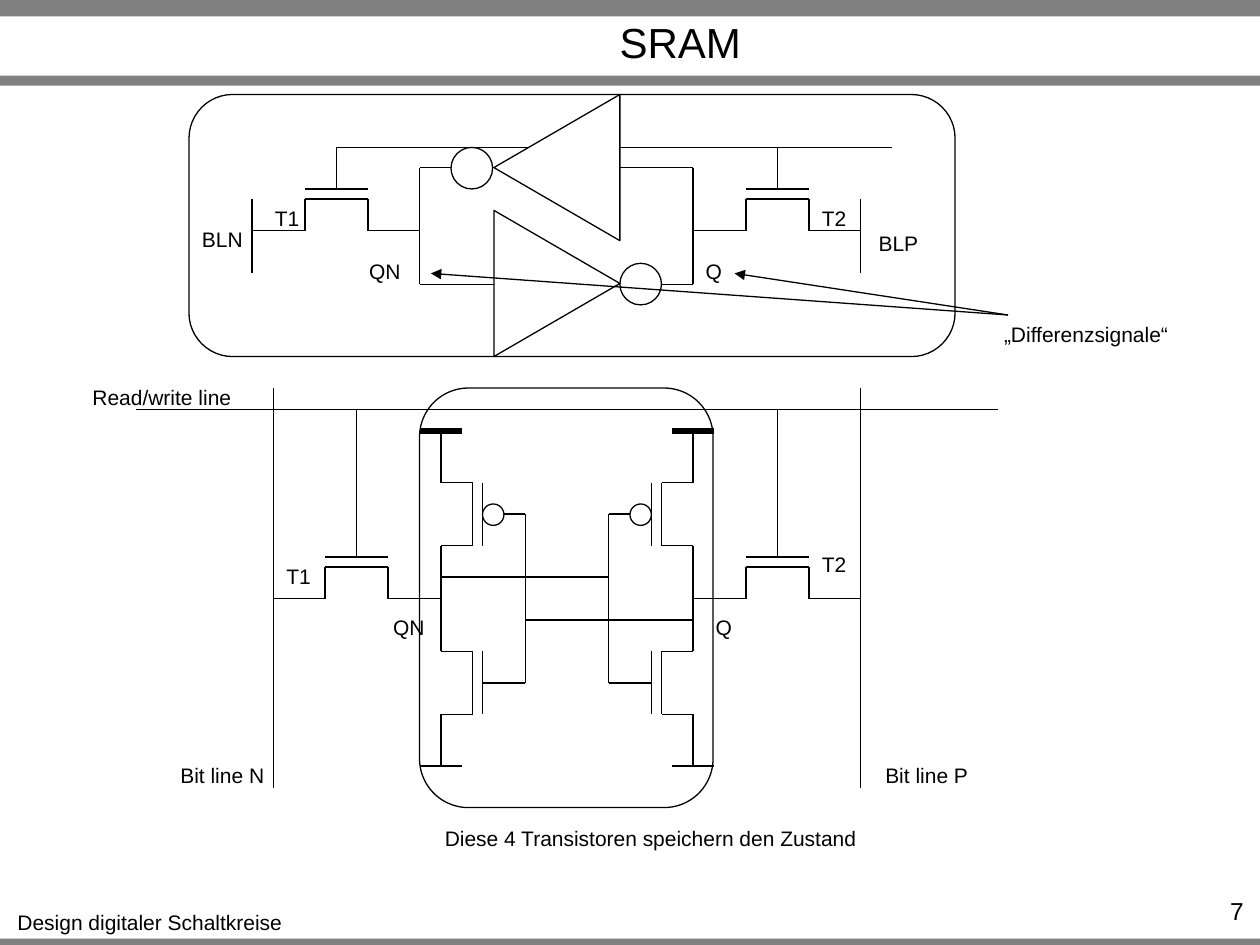
from dataclasses import dataclass

from lxml import etree
from pptx import Presentation
from pptx.dml.color import RGBColor
from pptx.enum.shapes import MSO_CONNECTOR, MSO_SHAPE
from pptx.enum.text import MSO_ANCHOR, MSO_AUTO_SIZE, PP_ALIGN
from pptx.oxml.ns import qn
from pptx.util import Inches, Pt

STRAIGHT = MSO_CONNECTOR.STRAIGHT
RECTANGLE = MSO_SHAPE.RECTANGLE
ROUNDED = MSO_SHAPE.ROUNDED_RECTANGLE
OVAL = MSO_SHAPE.OVAL
TRIANGLE = MSO_SHAPE.ISOSCELES_TRIANGLE
CENTER, RIGHT = PP_ALIGN.CENTER, PP_ALIGN.RIGHT
TOP, MIDDLE = MSO_ANCHOR.TOP, MSO_ANCHOR.MIDDLE
FIT_SHAPE = MSO_AUTO_SIZE.SHAPE_TO_FIT_TEXT


@dataclass(frozen=True)
class Theme:
    ink: RGBColor = RGBColor(0, 0, 0)
    paper: RGBColor = RGBColor(255, 255, 255)
    band: RGBColor = RGBColor(128, 128, 128)
    font: str = "Arial"
    label: int = 12
    number: int = 14
    title: int = 24
    thin: float = 0.75
    thick: float = 3


class Schematic:
    def __init__(self, slide, theme):
        self.slide = slide
        self.theme = theme

    def wire(self, x1, y1, x2, y2, width=None, arrow=False):
        wire = self.slide.shapes.add_connector(
            STRAIGHT, Inches(x1), Inches(y1), Inches(x2), Inches(y2))
        wire.line.color.rgb = self.theme.ink
        wire.line.width = Pt(width or self.theme.thin)
        properties = wire._element.spPr
        if arrow:
            etree.SubElement(properties.find(qn("a:ln")), qn("a:tailEnd"), type="triangle")
        etree.SubElement(properties, qn("a:effectLst"))

    def outline(self, kind, x, y, width, height, fill=None, rotation=0):
        outline = self.slide.shapes.add_shape(
            kind, Inches(x), Inches(y), Inches(width), Inches(height))
        outline.shadow.inherit = False
        outline.rotation = rotation
        outline.line.color.rgb = self.theme.ink
        outline.line.width = Pt(self.theme.thin)
        if fill is None:
            outline.fill.background()
        else:
            outline.fill.solid()
            outline.fill.fore_color.rgb = fill
        return outline

    def band(self, y, height):
        band = self.outline(RECTANGLE, 0, y, 10, height, self.theme.band)
        band.line.fill.background()

    def text(self, words, x, y, width, height, size, align=CENTER, anchor=TOP, wrap=True):
        box = self.slide.shapes.add_textbox(
            Inches(x), Inches(y), Inches(width), Inches(height))
        frame = box.text_frame
        frame.word_wrap = wrap
        frame.vertical_anchor = anchor
        if not wrap:
            frame.auto_size = FIT_SHAPE
        paragraph = frame.paragraphs[0]
        paragraph.alignment = align
        run = paragraph.add_run()
        run.text = words
        run.font.name = self.theme.font
        run.font.size = Pt(size)
        run.font.color.rgb = self.theme.ink

    def label(self, words, x, y, width):
        self.text(words, x, y, width, 0.3, self.theme.label, wrap=False)

    def access_transistor(self, x, gate_y, word_y, left_end, right_end):
        left, right = x - 0.25, x + 0.25
        channel_y, wire_y = gate_y + 0.08, gate_y + 0.33
        self.wire(left, channel_y, right, channel_y)
        self.wire(left, channel_y, left, wire_y)
        self.wire(right, channel_y, right, wire_y)
        self.wire(left, gate_y, right, gate_y)
        self.wire(left_end, wire_y, left, wire_y)
        self.wire(right, wire_y, right_end, wire_y)
        self.wire(x, gate_y, x, word_y)

    def cell_half(self, axis, side):
        def mirrored(d1, y1, d2, y2, width=None):
            self.wire(axis + side * d1, y1, axis + side * d2, y2, width)

        for top, gate_end in ((3.83, 0.5), (5.17, 0.67)):
            bottom, middle = top + 0.5, top + 0.25
            mirrored(0.75, top, 0.75, bottom)
            mirrored(0.75, top, 1, top)
            mirrored(0.75, bottom, 1, bottom)
            mirrored(0.67, top, 0.67, bottom)
            mirrored(gate_end, middle, 0.33, middle)
        for start, end in ((3.42, 3.83), (4.33, 4.75), (4.75, 5.17), (5.67, 6.08)):
            mirrored(1, start, 1, end)
        mirrored(0.33, 4.08, 0.33, 5.42)
        mirrored(0.83, 3.42, 1.17, 3.42, self.theme.thick)
        mirrored(0.83, 6.08, 1.17, 6.08)
        self.outline(OVAL, axis + side * 0.585 - 0.085, 4, 0.17, 0.17)

    def inverter_bubble(self, x, y):
        self.outline(OVAL, x, y, 0.33, 0.33, self.theme.paper)

    def inverter_body(self, y, rotation, fill=None):
        self.outline(TRIANGLE, 3.84, y, 1.16, 1, fill, rotation)


def draw_frame(schematic):
    theme = schematic.theme
    for y, height in ((7.45, 0.08), (0, 0.13), (0.6, 0.08)):
        schematic.band(y, height)
    schematic.label("Design digitaler Schaltkreise", 0.03, 7.17, 2.32)
    schematic.text("SRAM", 1.3, 0.14, 8.2, 0.38, theme.title, anchor=MIDDLE)
    schematic.text("7", 9.1, 7.06, 0.87, 0.24, theme.number, RIGHT)


def draw_transistor_cell(schematic):
    for bit_line_x in (2.17, 6.83):
        schematic.wire(bit_line_x, 3.08, bit_line_x, 6.25)
    schematic.wire(1.08, 3.25, 7.92, 3.25)
    for side in (1, -1):
        schematic.cell_half(4.5, side)
    schematic.access_transistor(2.83, 4.42, 3.25, 2.17, 3.5)
    schematic.access_transistor(6.17, 4.42, 3.25, 5.5, 6.83)
    schematic.wire(3.5, 4.58, 4.83, 4.58)
    schematic.wire(4.17, 4.92, 5.5, 4.92)
    schematic.outline(ROUNDED, 3.33, 3.08, 2.33, 3.33)


def draw_inverter_cell(schematic):
    schematic.wire(4.92, 2.26, 5.5, 2.26)
    schematic.inverter_bubble(4.92, 2.09)
    schematic.inverter_body(1.75, 90)
    schematic.wire(3.33, 2.26, 3.92, 2.26)
    schematic.wire(3.92, 1.33, 3.33, 1.33)
    schematic.inverter_bubble(3.58, 1.17)
    schematic.wire(5.5, 1.33, 4.92, 1.33)
    for node_x in (5.5, 3.33):
        schematic.wire(node_x, 2.25, node_x, 1.33)
    schematic.access_transistor(2.67, 1.5, 1.17, 2, 3.33)
    schematic.access_transistor(6.17, 1.5, 1.17, 5.5, 6.83)
    for bit_line_x in (6.83, 2):
        schematic.wire(bit_line_x, 1.58, bit_line_x, 2.17)
    for signal_x in (5.83, 3.42):
        schematic.wire(8, 2.5, signal_x, 2.17, arrow=True)
    schematic.wire(2.67, 1.17, 7.08, 1.17)
    schematic.inverter_body(0.83, 270, schematic.theme.paper)
    schematic.outline(ROUNDED, 1.5, 0.75, 6.08, 2.08)


def draw_labels(schematic):
    labels = (
        ("Read/write line", 0.63, 3, 1.31),
        ("Bit line N", 1.33, 6, 0.87),
        ("Bit line P", 6.92, 6, 0.87),
        ("Q", 5.58, 4.83, 0.33),
        ("QN", 3.02, 4.83, 0.45),
        ("Diese 4 Transistoren speichern den Zustand", 3.42, 6.5, 3.49),
        ("Q", 5.5, 2, 0.33),
        ("QN", 2.83, 2, 0.45),
        ("BLN", 1.5, 1.75, 0.53),
        ("BLP", 6.87, 1.78, 0.52),
        ("„Differenzsignale“", 7.86, 2.5, 1.52),
        ("T2", 6.42, 4.33, 0.4),
        ("T1", 2.17, 4.42, 0.4),
        ("T2", 6.42, 1.58, 0.4),
        ("T1", 2.08, 1.58, 0.4),
    )
    for label in labels:
        schematic.label(*label)


def main():
    presentation = Presentation()
    presentation.slide_width = Inches(10)
    presentation.slide_height = Inches(7.5)
    slide = presentation.slides.add_slide(presentation.slide_layouts[6])
    schematic = Schematic(slide, Theme())
    draw_frame(schematic)
    draw_transistor_cell(schematic)
    draw_inverter_cell(schematic)
    draw_labels(schematic)
    presentation.save("out.pptx")


if __name__ == "__main__":
    main()
